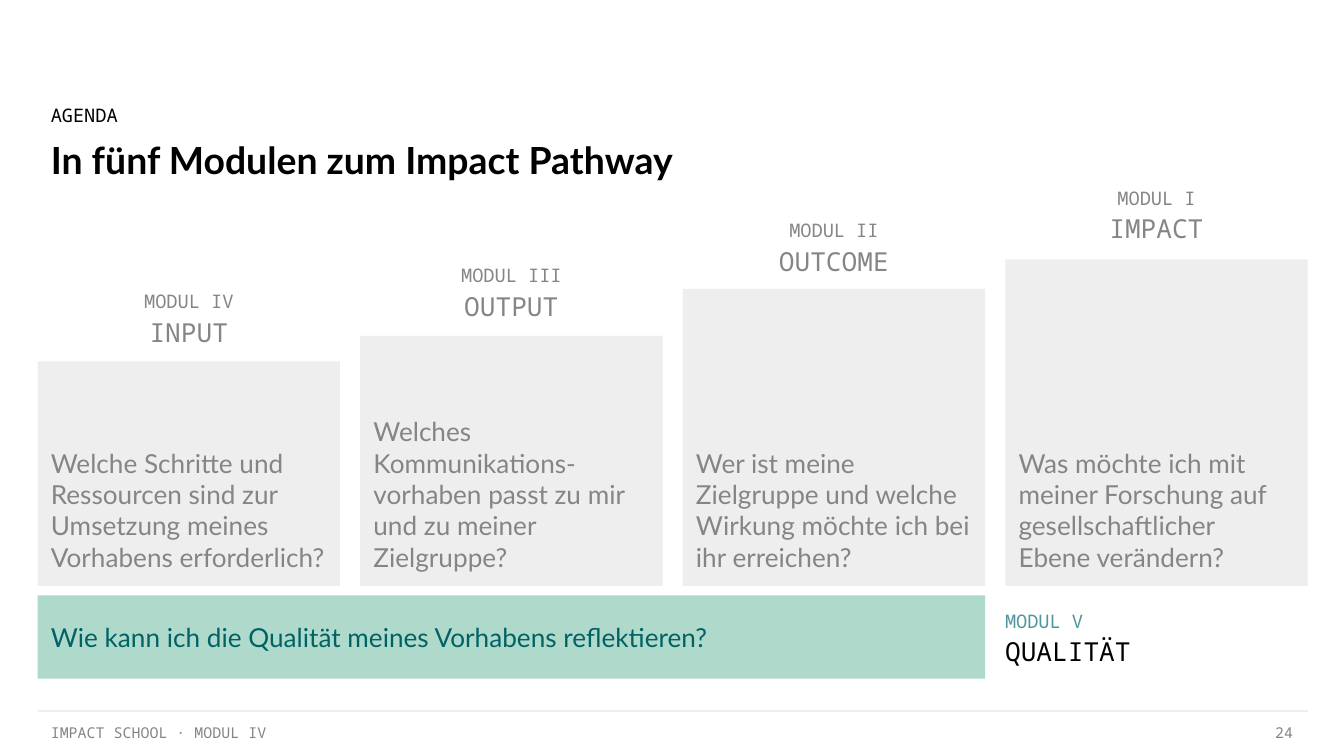
from lxml.etree import SubElement
from pptx import Presentation
from pptx.dml.color import RGBColor
from pptx.enum.shapes import MSO_CONNECTOR, MSO_SHAPE
from pptx.enum.text import MSO_ANCHOR, PP_ALIGN
from pptx.oxml.ns import qn
from pptx.util import Inches, Pt

BLACK = RGBColor(0x00, 0x00, 0x00)
WHITE = RGBColor(0xFF, 0xFF, 0xFF)
GRAY = RGBColor(0x85, 0x85, 0x85)
LIGHT = RGBColor(0xEE, 0xEE, 0xEE)
MINT = RGBColor(0xAF, 0xDA, 0xCB)
TEAL = RGBColor(0x00, 0x62, 0x65)
BLUE = RGBColor(0x4F, 0x96, 0x9F)
SANS = "Lato"
MONO = "Noto Sans Mono"

LEFT, RIGHT = 0.28, 9.73
COL_W, COL_STEP, COL_BOTTOM = 2.25, 2.4, 4.36
LABEL_W, LABEL_H, LABEL_STEP = 1.65, 0.28, 0.23

prs = Presentation()
prs.slide_width = Inches(10)
prs.slide_height = Inches(10) * 9 // 16
s = prs.slides.add_slide(prs.slide_layouts[6])


def add_text(text, x, y, w, h, size=14, font=MONO, color=GRAY, bold=False,
             align=PP_ALIGN.LEFT, anchor=MSO_ANCHOR.MIDDLE, fill=None,
             spacing=None, right=0.1):
    """Add a text box, or a filled rectangle with text when fill is given."""
    box = Inches(x), Inches(y), Inches(w), Inches(h)
    if fill is None:
        sp = s.shapes.add_textbox(*box)
    else:
        sp = s.shapes.add_shape(MSO_SHAPE.RECTANGLE, *box)
        sp.shadow.inherit = False
        sp.fill.solid()
        sp.fill.fore_color.rgb = fill
        sp.line.fill.background()
    tf = sp.text_frame
    tf.word_wrap = True
    tf.vertical_anchor = anchor
    tf.margin_left = tf.margin_top = tf.margin_bottom = Inches(0.1)
    tf.margin_right = Inches(right)
    p = tf.paragraphs[0]
    p.text = text
    p.alignment = align
    p.line_spacing = spacing
    for r in p.runs:
        r.font.size = Pt(size)
        r.font.name = font
        r.font.bold = bold
        r.font.color.rgb = color


# Footer
add_text("IMPACT SCHOOL · MODUL IV", LEFT, 5.32, 6.3, 0.34, size=8,
         anchor=MSO_ANCHOR.TOP)
add_text("24", 9.29, 5.29, 0.43, 0.34, size=8, align=PP_ALIGN.RIGHT, spacing=0.8)
rule = s.shapes.add_connector(MSO_CONNECTOR.STRAIGHT, Inches(LEFT), Inches(5.29),
                              Inches(RIGHT), Inches(5.29))
rule.line.color.rgb = LIGHT
rule.line.width = Pt(0.75)
SubElement(rule._element.spPr, qn("a:effectLst"))

# Heading
add_text("In fünf Modulen zum Impact Pathway", LEFT, 0.92, 7.77, 0.52, size=20,
         font=SANS, color=BLACK, bold=True, anchor=MSO_ANCHOR.TOP)
add_text("AGENDA", LEFT, 0.76, 7.77, 0.2, size=10, color=BLACK)

# Rising columns: top, label top, right margin, two labels and the question
columns = [
    (2.69, 2.1, 0.1, "MODUL IV", "INPUT",
     "Welche Schritte und Ressourcen sind zur Umsetzung meines Vorhabens erforderlich?"),
    (2.5, 1.91, 0.1, "MODUL III", "OUTPUT",
     "Welches Kommunikations-\nvorhaben passt zu mir und zu meiner Zielgruppe?"),
    (2.15, 1.57, 0.1, "MODUL II", "OUTCOME",
     "Wer ist meine Zielgruppe und welche Wirkung möchte ich bei ihr erreichen?"),
    (1.93, 1.33, 0.15, "MODUL I", "IMPACT",
     "Was möchte ich mit meiner Forschung auf gesellschaftlicher Ebene verändern?"),
]
for i, (top, label_top, right, module, stage, question) in enumerate(columns):
    x = LEFT + i * COL_STEP
    label_x = x + (COL_W - LABEL_W) / 2
    add_text(question, x, top, COL_W, COL_BOTTOM - top, font=SANS,
             anchor=MSO_ANCHOR.BOTTOM, fill=LIGHT, right=right)
    add_text(stage, label_x, label_top + LABEL_STEP, LABEL_W, LABEL_H,
             align=PP_ALIGN.CENTER)
    add_text(module, label_x, label_top, LABEL_W, LABEL_H, size=10,
             align=PP_ALIGN.CENTER)

# Quality bar
add_text("QUALITÄT", 7.38, 4.63, 1.22, 0.37, color=BLACK,
         anchor=MSO_ANCHOR.TOP, fill=WHITE)
add_text("Wie kann ich die Qualität meines Vorhabens reflektieren?", LEFT, 4.43,
         7.05, 0.62, font=SANS, color=TEAL, fill=MINT)
add_text("MODUL V", 7.38, 4.48, 1, LABEL_H, size=10, color=BLUE)

prs.save("out.pptx")
